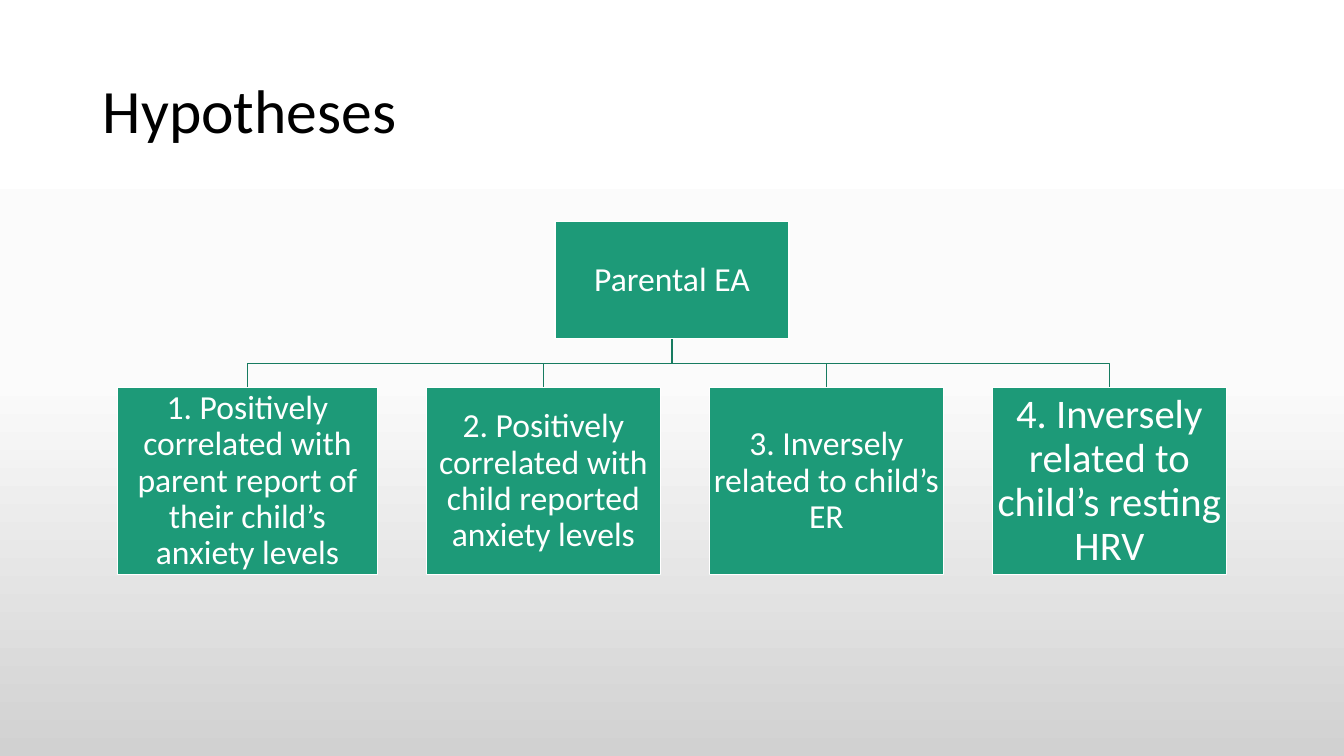
import copy
import dataclasses

import pptx
import pptx.dml.color
import pptx.enum.shapes
import pptx.enum.text
import pptx.oxml.ns
import pptx.shapes.autoshape
import pptx.slide
import pptx.text.text
import pptx.util

SLIDE_WIDTH = pptx.util.Inches(13.33)
SLIDE_HEIGHT = pptx.util.Inches(7.5)
MODULE = pptx.util.Inches(2.32)
GAP = 0.21
ROOT_TOP = pptx.util.Inches(2.2)
ROOT_ROWS = 0.5
CHILD_ROWS = 0.8
FONT = "Calibri"
COLORS = {"title": "000000", "box": "1D9A78", "branch": "177B60", "light": "FFFFFF"}
BACKGROUND_STOPS = [(0, "FFFFFF"), (0.5, "FBFBFB"), (1, "D1D1D1")]


@dataclasses.dataclass
class Hypothesis:
    text: str
    columns: float = 1
    size: int = 24


@dataclasses.dataclass
class Box:
    left: int
    top: int
    width: int
    height: int

    @property
    def center(self) -> int:
        return self.left + self.width // 2


HYPOTHESES = [
    Hypothesis("1. Positively correlated with parent report of their child’s anxiety levels", columns=1.11),
    Hypothesis("2. Positively correlated with child reported anxiety levels"),
    Hypothesis("3. Inversely related to child’s ER"),
    Hypothesis("4. Inversely related to child’s resting HRV", size=29),
]


def color(name: str) -> pptx.dml.color.RGBColor:
    return pptx.dml.color.RGBColor.from_string(COLORS[name])


def modules(count: float) -> int:
    return round(MODULE * count)


def format_paragraph(paragraph: pptx.text.text._Paragraph, size: int, color_name: str,
                     alignment: pptx.enum.text.PP_ALIGN) -> None:
    paragraph.alignment = alignment
    paragraph.line_spacing = 0.9
    for run in paragraph.runs:
        run.font.name = FONT
        run.font.size = pptx.util.Pt(size)
        run.font.color.rgb = color(color_name)


def paint_background(slide: pptx.slide.Slide) -> None:
    fill = slide.background.fill
    fill.gradient()
    fill.gradient_angle = 270
    stop_list = next(slide.element.iter(pptx.oxml.ns.qn("a:gsLst")))
    stop_list.append(copy.deepcopy(stop_list[0]))
    for stop, (position, value) in zip(fill.gradient_stops, BACKGROUND_STOPS):
        stop.position = position
        stop.color.rgb = pptx.dml.color.RGBColor.from_string(value)


def add_title(slide: pptx.slide.Slide, text: str) -> None:
    title = slide.shapes.title
    title.left, title.top = round(SLIDE_WIDTH * 0.069), pptx.util.Inches(0.4)
    title.width, title.height = pptx.util.Inches(11.5), pptx.util.Inches(1.45)
    title.text_frame.text = text
    title.text_frame.vertical_anchor = pptx.enum.text.MSO_ANCHOR.MIDDLE
    format_paragraph(title.text_frame.paragraphs[0], 44, "title", pptx.enum.text.PP_ALIGN.LEFT)


def add_branch(slide: pptx.slide.Slide, parent: Box, child: Box) -> None:
    start = parent.top + parent.height
    middle = (start + child.top) // 2
    builder = slide.shapes.build_freeform(parent.center, start)
    builder.add_line_segments(
        [(parent.center, middle), (child.center, middle), (child.center, child.top)], close=False
    )
    branch = builder.convert_to_shape()
    branch.shadow.inherit = False
    branch.fill.background()
    branch.line.color.rgb = color("branch")
    branch.line.width = pptx.util.Pt(1)


def add_box(slide: pptx.slide.Slide, box: Box, text: str, size: int) -> None:
    shape = slide.shapes.add_shape(
        pptx.enum.shapes.MSO_SHAPE.RECTANGLE, box.left, box.top, box.width, box.height
    )
    shape.shadow.inherit = False
    shape.fill.solid()
    shape.fill.fore_color.rgb = color("box")
    shape.line.color.rgb = color("light")
    shape.line.width = pptx.util.Pt(1)
    frame = shape.text_frame
    frame.word_wrap = True
    frame.vertical_anchor = pptx.enum.text.MSO_ANCHOR.MIDDLE
    inset = pptx.util.Inches(0.02)
    frame.margin_left = frame.margin_right = frame.margin_top = frame.margin_bottom = inset
    frame.text = text
    format_paragraph(frame.paragraphs[0], size, "light", pptx.enum.text.PP_ALIGN.CENTER)


def layout_children(top: int) -> list[Box]:
    total = sum(item.columns for item in HYPOTHESES) + GAP * (len(HYPOTHESES) - 1)
    left = (SLIDE_WIDTH - modules(total)) // 2
    boxes = []
    for item in HYPOTHESES:
        boxes.append(Box(left, top, modules(item.columns), modules(CHILD_ROWS)))
        left += modules(item.columns + GAP)
    return boxes


def main() -> None:
    presentation = pptx.Presentation()
    presentation.slide_width, presentation.slide_height = SLIDE_WIDTH, SLIDE_HEIGHT
    slide = presentation.slides.add_slide(presentation.slide_layouts.get_by_name("Title Only"))
    paint_background(slide)
    add_title(slide, "Hypotheses")
    root = Box((SLIDE_WIDTH - MODULE) // 2, ROOT_TOP, MODULE, modules(ROOT_ROWS))
    children = layout_children(ROOT_TOP + modules(ROOT_ROWS + GAP))
    for child in children:
        add_branch(slide, root, child)
    add_box(slide, root, "Parental EA", 24)
    for child, item in zip(children, HYPOTHESES):
        add_box(slide, child, item.text, item.size)
    presentation.save("out.pptx")


if __name__ == "__main__":
    main()
